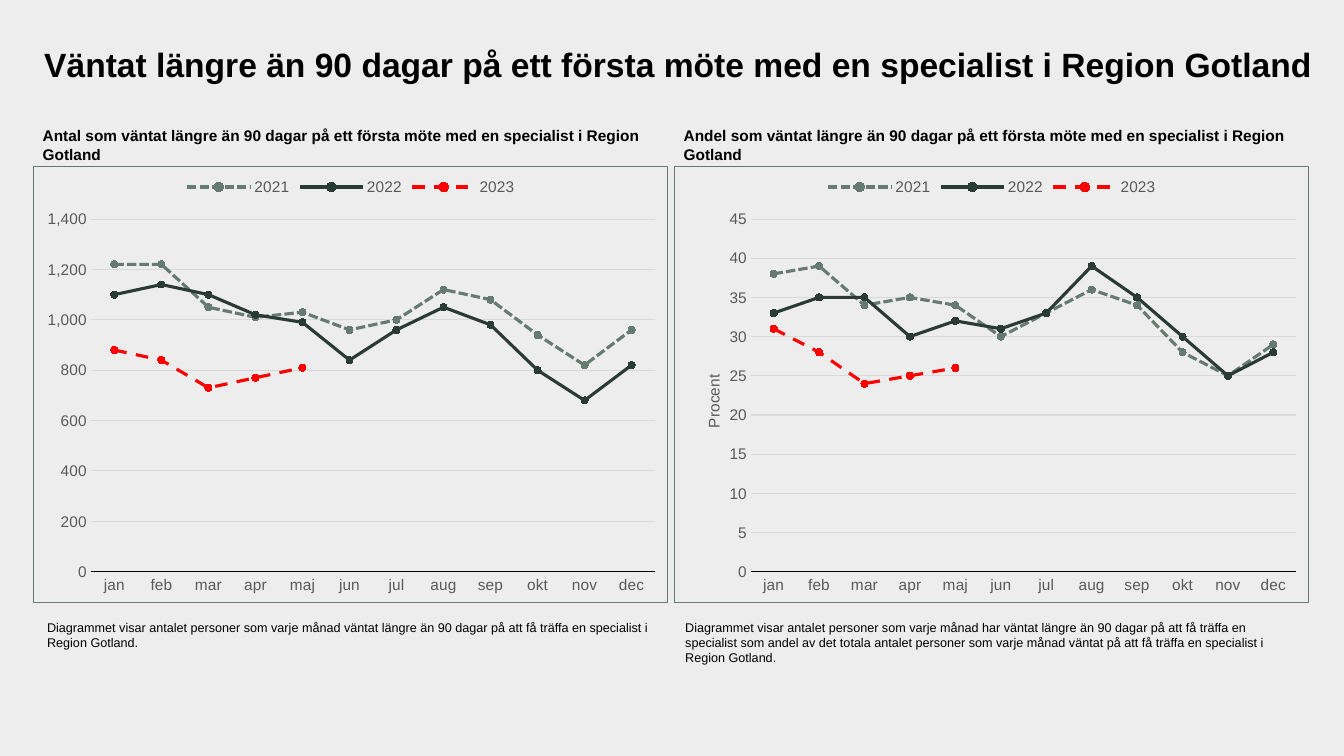
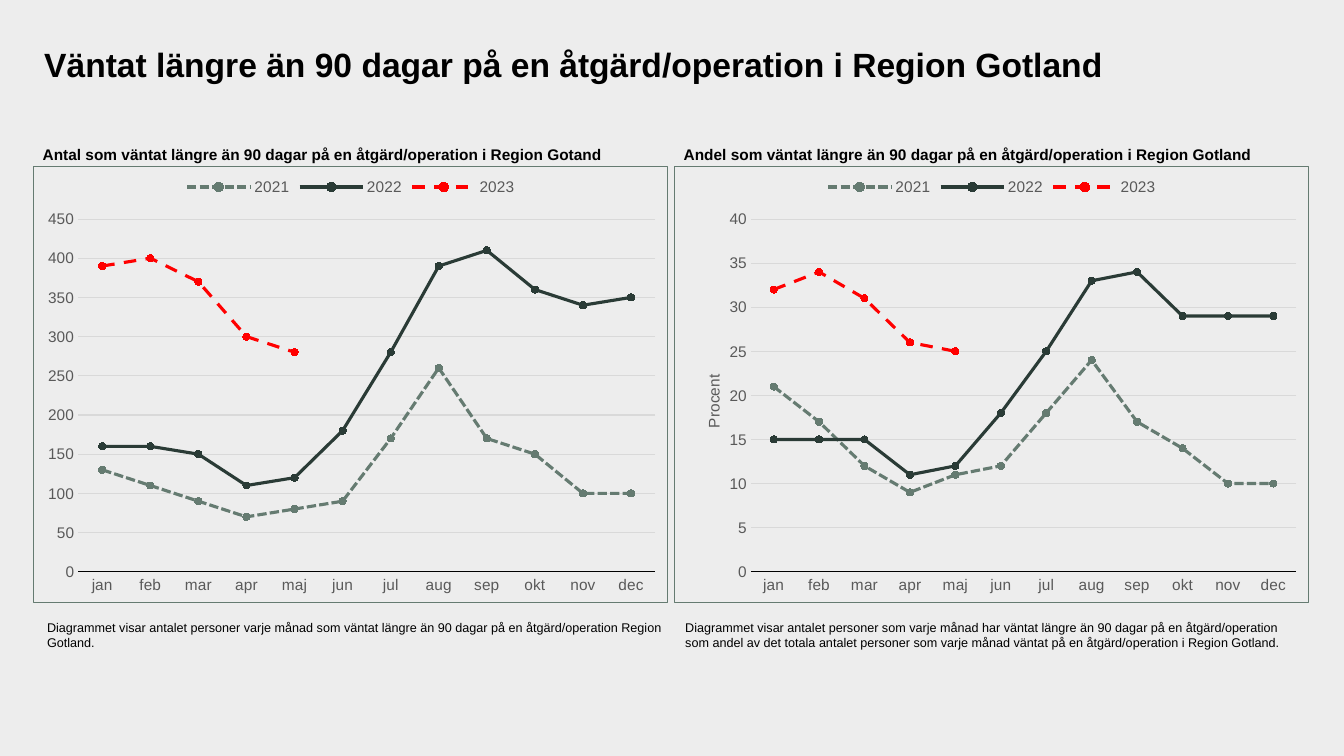
import pptx
import pptx.chart.data
import pptx.dml.color
import pptx.enum.chart
import pptx.enum.dml
import pptx.oxml
import pptx.oxml.ns
import pptx.util

Pt = pptx.util.Pt
qn = pptx.oxml.ns.qn
ENUM = pptx.enum.chart
DASH = pptx.enum.dml.MSO_LINE

COLORS = {"back": "EDEDED", "ink": "000000", "label": "595959",
          "grid": "D9D9D9", "border": "657B71", "2021": "657B71",
          "2022": "2A3B36", "2023": "FF0000"}
DASHES = {"2021": DASH.SQUARE_DOT, "2022": None, "2023": DASH.DASH}
MONTHS = ["jan", "feb", "mar", "apr", "maj", "jun",
          "jul", "aug", "sep", "okt", "nov", "dec"]
FACE = "Arial"
STYLES = {"title": {"size": 24, "bold": True},
          "head": {"size": 11, "bold": True},
          "note": {"size": 9, "bold": False}}

CHART = {"top": 118.8, "wide": 453.6, "high": 311.8}
LEFTS = [23.8, 481.7]
HEAD_END = 120.2
NOTE_TOP = 439.2
NOTE_LEFTS = [26.6, 482.4]

SLIDES = [
    {"title": "Väntat längre än 90 dagar på ett första möte med en specialist i Region Gotland",
     "panels": [
         {"head": "Antal som väntat längre än 90 dagar på ett första möte med en specialist i Region Gotland",
          "lines": (2, 2), "top": 1400, "step": 200, "form": "#,##0",
          "inset": 0.09, "axis": None,
          "note": "Diagrammet visar antalet personer som varje månad väntat längre än 90 dagar på att få träffa en specialist i Region Gotland.",
          "rows": {
              "2021": [1220, 1220, 1050, 1010, 1030, 960, 1000, 1120, 1080, 940, 820, 960],
              "2022": [1100, 1140, 1100, 1020, 990, 840, 960, 1050, 980, 800, 680, 820],
              "2023": [880, 840, 730, 770, 810]}},
         {"head": "Andel som väntat längre än 90 dagar på ett första möte med en specialist i Region Gotland",
          "lines": (2, 3), "top": 45, "step": 5, "form": "0",
          "inset": 0.12, "axis": "Procent",
          "note": "Diagrammet visar antalet personer som varje månad har väntat längre än 90 dagar på att få träffa en specialist som andel av det totala antalet personer som varje månad väntat på att få träffa en specialist i Region Gotland.",
          "rows": {
              "2021": [38, 39, 34, 35, 34, 30, 33, 36, 34, 28, 25, 29],
              "2022": [33, 35, 35, 30, 32, 31, 33, 39, 35, 30, 25, 28],
              "2023": [31, 28, 24, 25, 26]}}]},
    {"title": "Väntat längre än 90 dagar på en åtgärd/operation i Region Gotland",
     "panels": [
         {"head": "Antal som väntat längre än 90 dagar på en åtgärd/operation i Region Gotand",
          "lines": (1, 2), "top": 450, "step": 50, "form": "0",
          "inset": 0.07, "axis": None,
          "note": "Diagrammet visar antalet personer varje månad som väntat längre än 90 dagar på en åtgärd/operation Region Gotland.",
          "rows": {
              "2021": [130, 110, 90, 70, 80, 90, 170, 260, 170, 150, 100, 100],
              "2022": [160, 160, 150, 110, 120, 180, 280, 390, 410, 360, 340, 350],
              "2023": [390, 400, 370, 300, 280]}},
         {"head": "Andel som väntat längre än 90 dagar på en åtgärd/operation i Region Gotland",
          "lines": (1, 2), "top": 40, "step": 5, "form": "0",
          "inset": 0.12, "axis": "Procent",
          "note": "Diagrammet visar antalet personer som varje månad har väntat längre än 90 dagar på en åtgärd/operation som andel av det totala antalet personer som varje månad väntat på en åtgärd/operation i Region Gotland.",
          "rows": {
              "2021": [21, 17, 12, 9, 11, 12, 18, 24, 17, 14, 10, 10],
              "2022": [15, 15, 15, 11, 12, 18, 25, 33, 34, 29, 29, 29],
              "2023": [32, 34, 31, 26, 25]}}]},
]


def color(name):
    return pptx.dml.color.RGBColor.from_string(COLORS[name])


def assign(target, values):
    for name, value in values.items():
        setattr(target, name, value)


def style(font, size, bold, tone):
    assign(font, {"name": FACE, "size": Pt(size), "bold": bold})
    font.color.rgb = color(tone)


def stroke(line, tone, width):
    line.color.rgb = color(tone)
    line.width = Pt(width)


def tall(kind, lines):
    """Height of a text box with this many lines."""
    return 7 + lines * STYLES[kind]["size"] * 1.2


def write(slide, kind, text, left, top, wide, lines):
    box = slide.shapes.add_textbox(Pt(left), Pt(top), Pt(wide),
                                   Pt(tall(kind, lines)))
    box.text_frame.word_wrap = True
    run = box.text_frame.paragraphs[0].add_run()
    run.text = text
    style(run.font, tone="ink", **STYLES[kind])


def node(body):
    space = pptx.oxml.ns.nsdecls("c", "a")
    head, tail = body.split(">", 1)
    return pptx.oxml.parse_xml(f"{head} {space}>{tail}")


def place(parent, index, parts):
    """Give a chart part a manual layout, as shares of the chart."""
    for old in parent.findall(qn("c:layout")):
        parent.remove(old)
    body = "".join(f'<c:{key} val="{val}"/>' for key, val in parts)
    parent.insert(index, node(
        f"<c:layout><c:manualLayout>{body}</c:manualLayout></c:layout>"))


def frame(chart):
    """Draw the thin border around the whole chart."""
    plot = chart._chartSpace.find(qn("c:chart"))
    plot.addnext(node(
        f'<c:spPr><a:noFill/><a:ln w="{Pt(0.75)}"><a:solidFill>'
        f'<a:srgbClr val="{COLORS["border"]}"/></a:solidFill></a:ln></c:spPr>'))


def name_axis(axis, text):
    title = axis.axis_title
    title.text_frame.text = text
    style(title.text_frame.paragraphs[0].runs[0].font, 11, False, "label")
    root = title._element
    body = root.find(".//" + qn("a:bodyPr"))
    body.set("rot", "-5400000")
    body.set("vert", "horz")
    place(root, 1, [("xMode", "edge"), ("yMode", "edge"),
                    ("x", 0.04), ("y", 0.47)])


def draw(slide, panel, left):
    data = pptx.chart.data.CategoryChartData(number_format=panel["form"])
    data.categories = MONTHS
    for year, vals in panel["rows"].items():
        data.add_series(year, vals + [None] * (len(MONTHS) - len(vals)))
    chart = slide.shapes.add_chart(
        ENUM.XL_CHART_TYPE.LINE_MARKERS, Pt(left), Pt(CHART["top"]),
        Pt(CHART["wide"]), Pt(CHART["high"]), data).chart
    style(chart.font, 11, False, "ink")
    frame(chart)
    assign(chart, {"has_title": False, "has_legend": True})
    assign(chart.legend, {"position": ENUM.XL_LEGEND_POSITION.TOP,
                          "include_in_layout": False})
    style(chart.legend.font, 11, False, "label")

    months, scale = chart.category_axis, chart.value_axis
    for axis in (months, scale):
        assign(axis, {"major_tick_mark": ENUM.XL_TICK_MARK.NONE,
                      "minor_tick_mark": ENUM.XL_TICK_MARK.NONE})
        style(axis.tick_labels.font, 11, False, "label")
    stroke(months.format.line, "ink", 0.75)
    assign(scale, {"minimum_scale": 0, "maximum_scale": panel["top"],
                   "major_unit": panel["step"], "has_major_gridlines": True})
    scale.format.line.fill.background()
    stroke(scale.major_gridlines.format.line, "grid", 0.75)
    assign(scale.tick_labels, {"number_format": panel["form"],
                               "number_format_is_linked": False})
    if panel["axis"]:
        name_axis(scale, panel["axis"])

    inset = panel["inset"]
    place(chart._chartSpace.find(".//" + qn("c:plotArea")), 0,
          [("layoutTarget", "inner"), ("xMode", "edge"), ("yMode", "edge"),
           ("x", inset), ("y", 0.12), ("w", round(0.98 - inset, 2)),
           ("h", 0.81)])

    chart.plots[0].vary_by_categories = False
    for line in chart.plots[0].series:
        line.smooth = False
        stroke(line.format.line, line.name, 2.25)
        if DASHES[line.name]:
            line.format.line.dash_style = DASHES[line.name]
        mark = line.marker
        assign(mark, {"style": ENUM.XL_MARKER_STYLE.CIRCLE, "size": 5})
        mark.format.fill.solid()
        mark.format.fill.fore_color.rgb = color(line.name)
        stroke(mark.format.line, line.name, 0.75)


def main():
    deck = pptx.Presentation()
    assign(deck, {"slide_width": Pt(960), "slide_height": Pt(540)})
    for page in SLIDES:
        slide = deck.slides.add_slide(deck.slide_layouts[6])
        slide.background.fill.solid()
        slide.background.fill.fore_color.rgb = color("back")
        write(slide, "title", page["title"], 24.5, 28, 923, 1)
        for panel, left, edge in zip(page["panels"], LEFTS, NOTE_LEFTS):
            rows, more = panel["lines"]
            draw(slide, panel, left)
            write(slide, "head", panel["head"], left - 0.4,
                  HEAD_END - tall("head", rows), CHART["wide"], rows)
            write(slide, "note", panel["note"], edge, NOTE_TOP,
                  CHART["wide"], more)
    deck.save("out.pptx")


if __name__ == "__main__":
    main()
